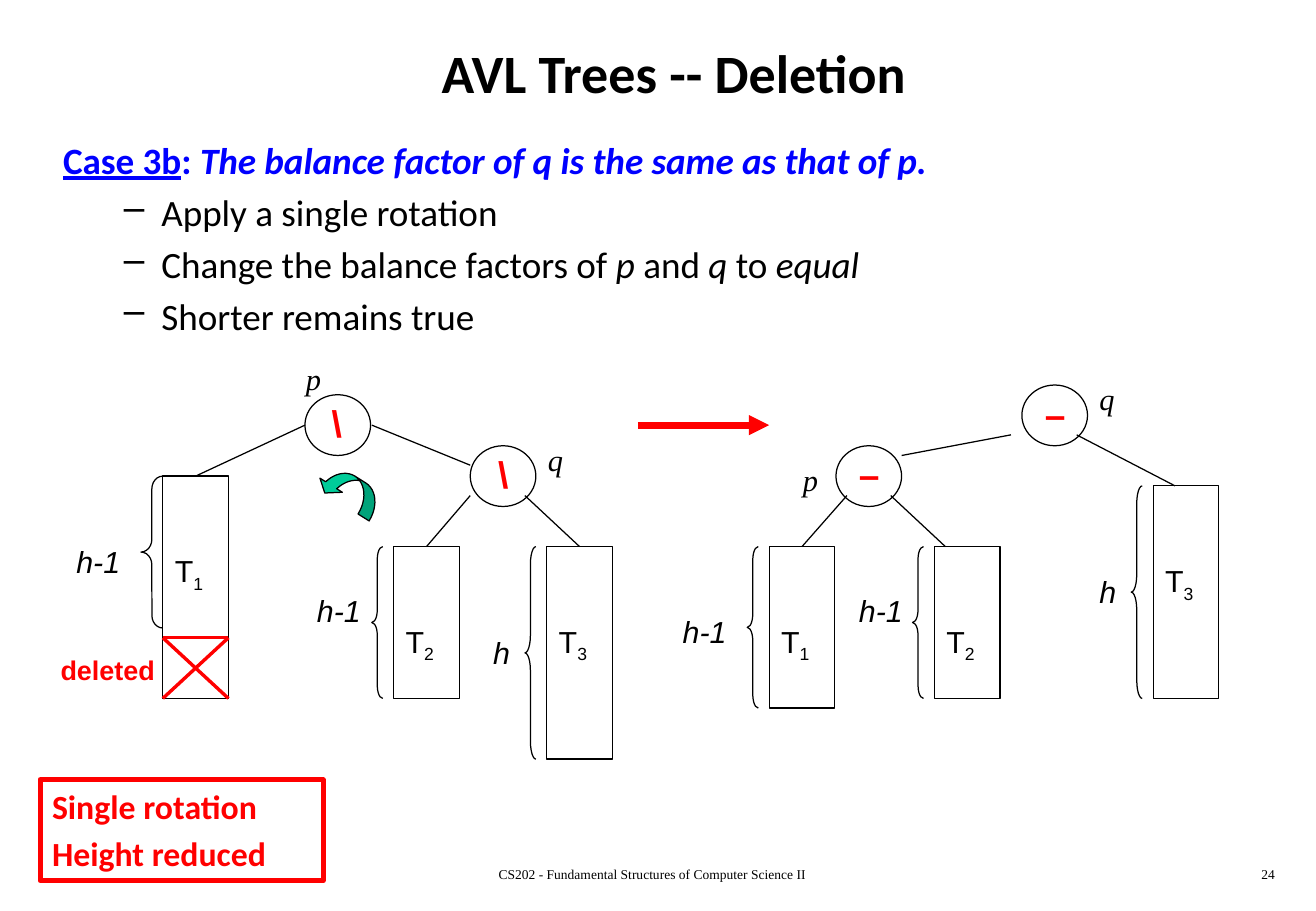
from lxml import etree
from pptx import Presentation
from pptx.dml.color import RGBColor
from pptx.enum import shapes, text
from pptx.oxml import ns
from pptx.util import Inches, Pt

BLACK = RGBColor(0x00, 0x00, 0x00)
WHITE = RGBColor(0xFF, 0xFF, 0xFF)
RED = RGBColor(0xFF, 0x00, 0x00)
BLUE = RGBColor(0x00, 0x00, 0xFF)
GREEN = RGBColor(0x00, 0xCC, 0x99)
SERIF = "Times New Roman"
NODE_W, NODE_H, TREE_W = 0.54, 0.5, 0.54

prs = Presentation()
prs.slide_width, prs.slide_height = Inches(10.83), Inches(7.5)
slide = prs.slides.add_slide(prs.slide_layouts[6])


def add_label(box, words, size, font, color=BLACK, bold=False, italic=False):
    """Add a wrapped text box with one formatted run."""
    label = slide.shapes.add_textbox(*map(Inches, box))
    label.text_frame.word_wrap = True
    paragraph = label.text_frame.paragraphs[0]
    paragraph.text = words
    style = paragraph.runs[0].font
    style.size, style.name, style.bold, style.italic = Pt(size), font, bold, italic
    style.color.rgb = color
    return label


def add_outline(kind, left, top, width, height, fill=None, color=BLACK, weight=0.75):
    """Add a preset shape, unfilled unless a fill is given."""
    outline = slide.shapes.add_shape(kind, *map(Inches, (left, top, width, height)))
    outline.shadow.inherit = False
    if fill is None:
        outline.fill.background()
    else:
        outline.fill.solid()
        outline.fill.fore_color.rgb = fill
    outline.line.color.rgb = color
    outline.line.width = Pt(weight)
    return outline


# Title
title = add_label((0.42, 0.17, 10.25, 0.84), "AVL Trees -- Deletion", 32, "Calibri", bold=True)
title.text_frame.vertical_anchor = text.MSO_ANCHOR.MIDDLE
title.text_frame.paragraphs[0].alignment = text.PP_ALIGN.CENTER

# Case description: italic pieces are flagged
case = add_label((0.42, 1.08, 9.08, 1.75), "Case 3b", 22, "Calibri", BLUE, bold=True)
heading = case.text_frame.paragraphs[0]
heading.runs[0].font.underline = True
steps = [
    [("Apply a single rotation", False)],
    [("Change the balance factors of ", False), ("p ", True), ("and ", False),
     ("q ", True), ("to ", False), ("equal", True)],
    [("Shorter remains true", False)],
]
case_lines = [(heading, [(": ", False), ("The balance factor of q is the same as that of p.", True)])]
for step in steps:
    bullet = case.text_frame.add_paragraph()
    bullet.space_before = Pt(4.4)
    bullet_props = bullet._p.get_or_add_pPr()
    bullet_props.set("marL", str(Inches(0.81)))
    bullet_props.set("indent", str(Inches(-0.31)))
    etree.SubElement(bullet_props, ns.qn("a:buChar")).set("char", "–")
    case_lines.append((bullet, step))
for paragraph, pieces in case_lines:
    for words, italic in pieces:
        run = paragraph.add_run()
        run.text = words
        run.font.size, run.font.name, run.font.italic = Pt(22), "Calibri", italic
        run.font.bold = paragraph is heading
        run.font.color.rgb = BLUE if paragraph is heading else BLACK

# Footer
course = add_label((3.34, 7.08, 4.06, 0.25),
                   "CS202 - Fundamental Structures of Computer Science II", 8, SERIF)
course.text_frame.paragraphs[0].alignment = text.PP_ALIGN.CENTER
page = add_label((8.33, 7.08, 2.26, 0.25), "24", 8, SERIF)
page.text_frame.paragraphs[0].alignment = text.PP_ALIGN.RIGHT

# Summary box
summary = add_outline(shapes.MSO_SHAPE.RECTANGLE, 0.33, 6.42, 2.33, 0.83, WHITE, RED, 3)
summary.text_frame.text = "Single rotation\nHeight reduced"
summary.text_frame.vertical_anchor = text.MSO_ANCHOR.TOP
for number, paragraph in enumerate(summary.text_frame.paragraphs):
    paragraph.alignment = text.PP_ALIGN.LEFT
    paragraph.space_before = Pt(4 * number)
    style = paragraph.runs[0].font
    style.size, style.name, style.bold = Pt(20), "Calibri", True
    style.color.rgb = RED

# Tree nodes: left, top, balance sign, sign left, name, name left, name top
nodes = [
    (2.51, 3.25, "\\", 2.63, "p", 2.42, 2.92),
    (3.87, 3.67, "\\", 4.0, "q", 4.41, 3.58),
    (8.41, 3.17, "–", 8.5, "q", 8.95, 3.08),
    (6.88, 3.67, "–", 6.97, "p", 6.51, 3.75),
]
for left, top, sign, sign_left, name, name_left, name_top in nodes:
    add_outline(shapes.MSO_SHAPE.OVAL, left, top, NODE_W, NODE_H)
    add_label((sign_left, top, 0.45, 0.47), sign, 22, "Arial", RED, bold=True)
    add_label((name_left, name_top, 0.63, 0.4), name, 18, SERIF, italic=True)

# Subtrees: left, top, height, index, name top,
# brace left, brace width, brace height, height text, text left, text top
subtrees = [
    (1.34, 3.92, 1.83, "1", 4.5, 1.16, 0.18, 1.25, "h-1", 0.53, 4.42),
    (3.24, 4.5, 1.25, "2", 5.08, 3.06, 0.09, 1.25, "h-1", 2.51, 4.83),
    (4.5, 4.5, 1.75, "3", 5.08, 4.32, 0.09, 1.75, "h", 3.96, 5.17),
    (6.33, 4.5, 1.33, "1", 5.08, 6.15, 0.09, 1.33, "h-1", 5.52, 5.0),
    (7.69, 4.5, 1.25, "2", 5.08, 7.51, 0.09, 1.25, "h-1", 6.97, 4.83),
    (9.49, 4.0, 1.75, "3", 4.58, 9.31, 0.09, 1.75, "h", 8.95, 4.67),
]
trees = []
for (left, top, height, index, name_top, brace_left, brace_w, brace_h,
     height_words, words_left, words_top) in subtrees:
    trees.append(add_outline(shapes.MSO_SHAPE.RECTANGLE, left, top, TREE_W, height))
    tree_name = add_label((left, name_top, TREE_W, 0.4), "T", 18, "Arial")
    subscript = tree_name.text_frame.paragraphs[0].add_run()
    subscript.text = index
    subscript.font.size, subscript.font.name = Pt(18), "Arial"
    subscript.font.color.rgb = BLACK
    subscript._r.get_or_add_rPr().set("baseline", "-25000")
    brace = add_outline(shapes.MSO_SHAPE.LEFT_BRACE, brace_left, top, brace_w, brace_h)
    brace.adjustments[0] = brace_h / 12 / brace_w
    brace.adjustments[1] = 0.5
    add_label((words_left, words_top, 0.9, 0.4), height_words, 18, "Arial", italic=True)
add_label((0.4, 5.33, 1.26, 0.37), "deleted", 16, "Arial", RED, bold=True)

# Lines: start, end, colour, weight, subtree whose top middle is the end
lines = [
    ((2.51, 3.5), (1.61, 3.92), BLACK, 0.75, trees[0]),
    ((3.06, 3.5), (3.87, 3.83), BLACK, 0.75, None),
    ((3.87, 4.08), (3.51, 4.5), BLACK, 0.75, trees[1]),
    ((4.32, 4.08), (4.77, 4.5), BLACK, 0.75, trees[2]),
    ((8.32, 3.58), (7.42, 3.75), BLACK, 0.75, None),
    ((8.86, 3.58), (9.67, 4.0), BLACK, 0.75, None),
    ((6.97, 4.08), (6.6, 4.5), BLACK, 0.75, trees[3]),
    ((7.33, 4.08), (7.78, 4.5), BLACK, 0.75, None),
    ((1.34, 5.25), (1.88, 5.25), RED, 2, None),
    ((1.34, 5.25), (1.88, 5.75), RED, 2, None),
    ((1.88, 5.25), (1.34, 5.75), RED, 2, None),
    ((5.25, 3.5), (6.33, 3.5), RED, 4, None),
]
for start, end, color, weight, tree in lines:
    link = slide.shapes.add_connector(shapes.MSO_CONNECTOR.STRAIGHT, *map(Inches, start + end))
    link.line.color.rgb = color
    link.line.width = Pt(weight)
    etree.SubElement(link._element.spPr, ns.qn("a:effectLst"))
    if tree is not None:
        link.end_connect(tree, 0)

# The last line is the arrow between the two trees
etree.SubElement(link.line._get_or_add_ln(), ns.qn("a:tailEnd")).set("type", "triangle")

# Rotation arrow
rotation = add_outline(shapes.MSO_SHAPE.CURVED_LEFT_ARROW, 2.75, 3.77, 0.25, 0.54, GREEN)
rotation.rotation = 302.2
rotation._element.spPr.xfrm.set("flipV", "1")
for number, value in enumerate((0.43, 0.87, 0.33)):
    rotation.adjustments[number] = value

prs.save("out.pptx")
